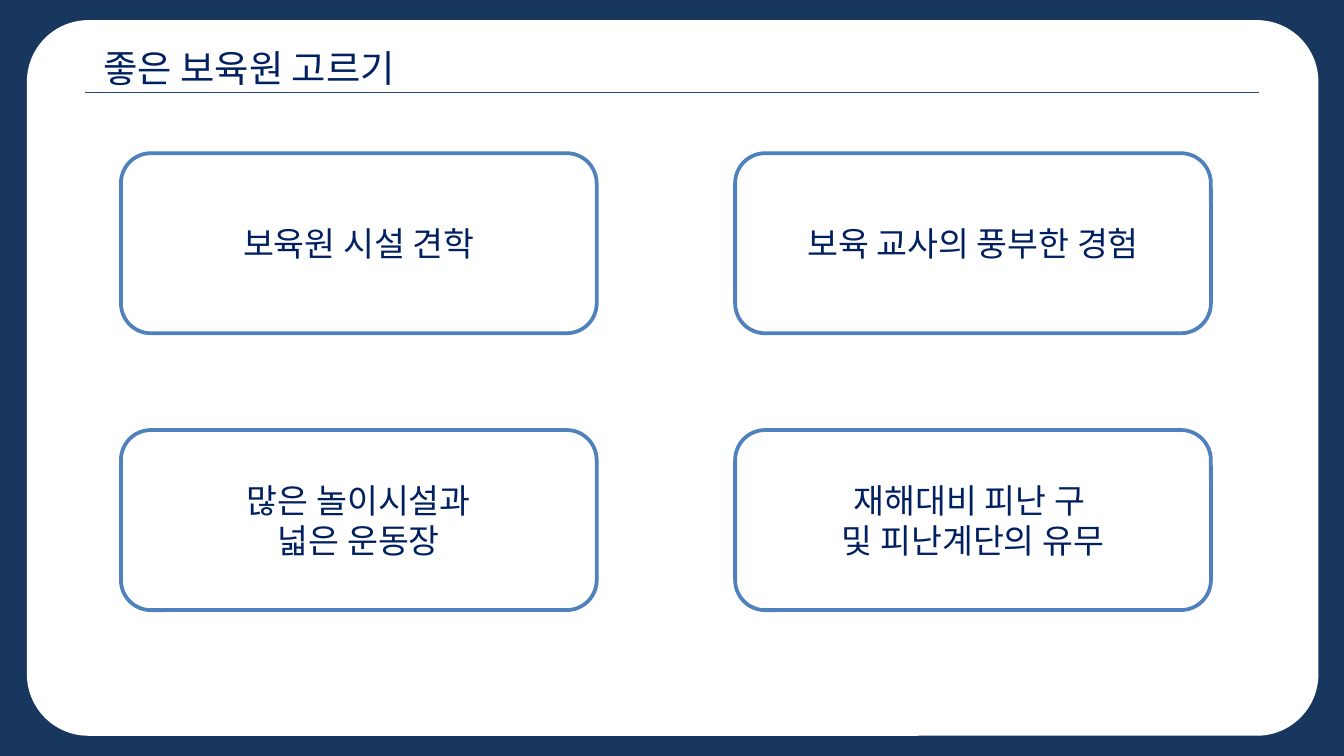
from lxml import etree
from pptx import Presentation, util as u
from pptx.dml.color import RGBColor
from pptx.enum import shapes, text
from pptx.oxml import ns

NAVY = RGBColor(0x17, 0x37, 0x5E)
INK = RGBColor(0x00, 0x20, 0x60)
RULE = RGBColor(0x1F, 0x49, 0x7D)
EDGE = RGBColor(0x4F, 0x81, 0xBD)
WHITE = RGBColor(0xFF, 0xFF, 0xFF)
FONT = "Noto Sans CJK KR"
WIDE = 10
HIGH = WIDE * 9 / 16

TITLE = "좋은 보육원 고르기"
CARDS = [
    [["보육원 시설 견학"], ["보육 교사의 풍부한 경험"]],
    [["많은 놀이시설과", "넓은 운동장"], ["재해대비 피난 구 ", "및 피난계단의 유무"]],
]
HEAD = {"size": u.Pt(20), "name": FONT}
BODY = {"size": u.Pt(18), "name": FONT}


def inch(*nums):
    return [u.Inches(num) for num in nums]


def write(frame, lines, style, align):
    for row, line in enumerate(lines):
        para = frame.paragraphs[0] if row == 0 else frame.add_paragraph()
        para.alignment = align
        run = para.add_run()
        run.text = line
        for key, value in style.items():
            setattr(run.font, key, value)
        run.font.color.rgb = INK
        face = etree.SubElement(run.font._element, ns.qn("a:ea"))
        face.set("typeface", FONT)


def panel(slide, box, edge=None, bend=None):
    shape = slide.shapes.add_shape(
        shapes.MSO_SHAPE.ROUNDED_RECTANGLE, *inch(*box))
    shape.shadow.inherit = False
    shape.fill.solid()
    shape.fill.fore_color.rgb = WHITE
    if bend is not None:
        shape.adjustments[0] = bend
    if edge is None:
        shape.line.fill.background()
    else:
        shape.line.color.rgb = edge
        shape.line.width = u.Pt(2)
    return shape


def header(slide, box):
    left, top, width, height = box
    base = top + height
    line = slide.shapes.add_connector(
        shapes.MSO_CONNECTOR.STRAIGHT, *inch(left, base, left + width, base))
    line.line.color.rgb = RULE
    line.line.width = u.Pt(0.75)
    etree.SubElement(line._element.spPr, ns.qn("a:effectLst"))
    label = slide.shapes.add_textbox(
        *inch(left + 0.04, top, width * 0.405, height * 1.1))
    frame = label.text_frame
    frame.word_wrap = True
    frame.auto_size = text.MSO_AUTO_SIZE.SHAPE_TO_FIT_TEXT
    write(frame, [TITLE], HEAD, text.PP_ALIGN.LEFT)


def cards(slide, box, gaps):
    left, top, width, height = box
    wide = (width - gaps[0]) / 2
    high = (height - gaps[1]) / 2
    for row, group in enumerate(CARDS):
        for col, lines in enumerate(group):
            spot = (left + col * (wide + gaps[0]),
                    top + row * (high + gaps[1]), wide, high)
            frame = panel(slide, spot, EDGE).text_frame
            frame.word_wrap = True
            frame.vertical_anchor = text.MSO_ANCHOR.MIDDLE
            write(frame, lines, BODY, text.PP_ALIGN.CENTER)


def main():
    deck = Presentation()
    deck.slide_width, deck.slide_height = inch(WIDE, HIGH)
    slide = deck.slides.add_slide(deck.slide_layouts[6])
    back = slide.background.fill
    back.solid()
    back.fore_color.rgb = NAVY
    panel(slide, (0.2, 0.15, WIDE - 0.39, HIGH - 0.3), bend=0.086)
    header(slide, (0.63, 0.29, WIDE - 1.26, 0.4))
    cards(slide, (0.9, 1.14, 8.11, 3.4), (1.03, 0.72))
    deck.save("out.pptx")


if __name__ == "__main__":
    main()
